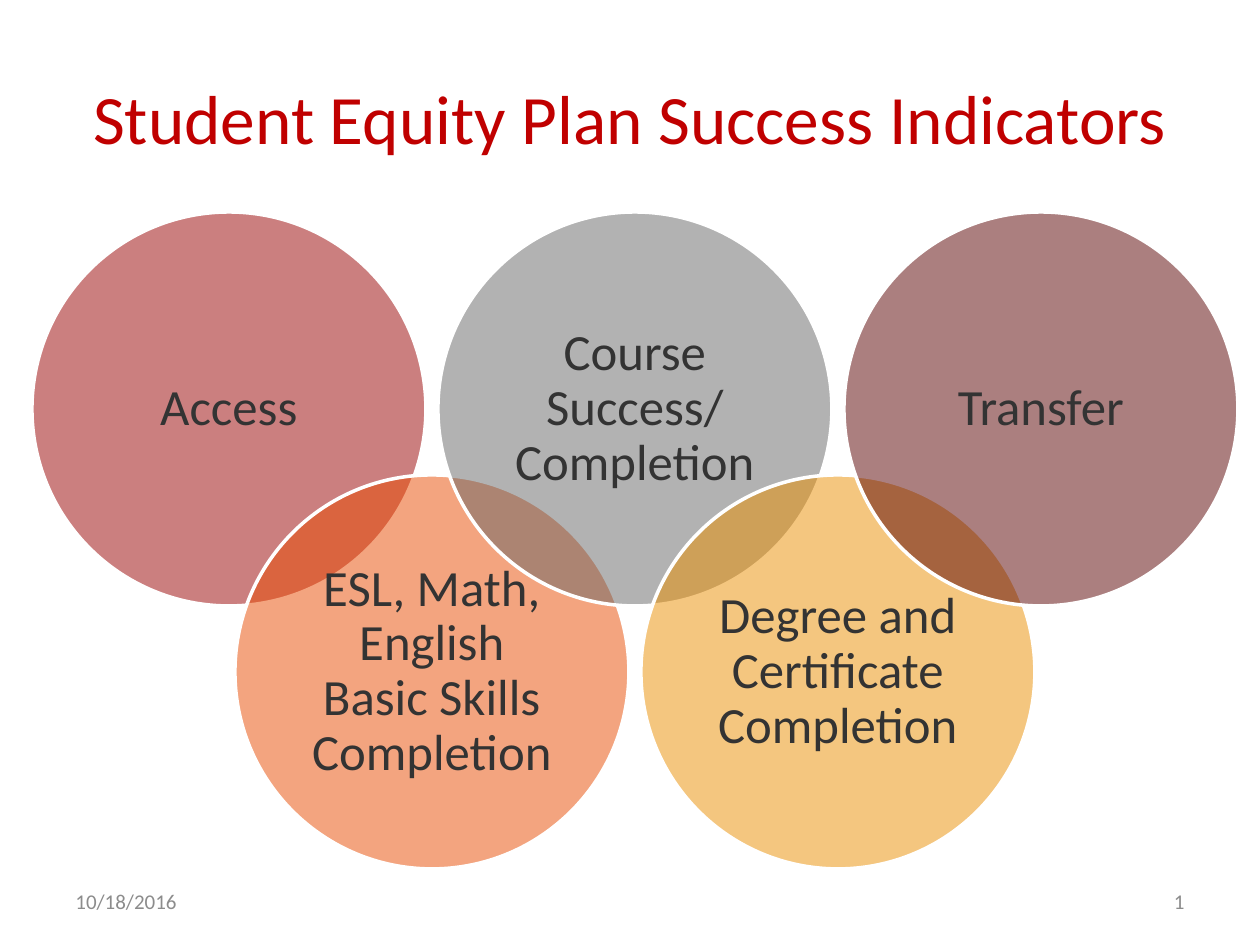
from dataclasses import dataclass

from lxml.etree import SubElement
from pptx import Presentation
from pptx.dml.color import RGBColor
from pptx.enum.shapes import MSO_SHAPE
from pptx.enum.text import MSO_ANCHOR, MSO_AUTO_SIZE, PP_ALIGN
from pptx.oxml.ns import qn
from pptx.slide import Slide
from pptx.text.text import TextFrame
from pptx.util import Emu, Pt

PX = 914400 // 126


@dataclass(frozen=True)
class Theme:
    font: str = "Calibri"
    title: str = "C00000"
    label: str = "333333"
    footer: str = "8C8C8C"
    outline: str = "FFFFFF"
    title_size: float = 39.6
    label_size: float = 29
    footer_size: float = 12
    outline_width: float = 2
    opacity: int = 50


@dataclass(frozen=True)
class Indicator:
    label: str
    color: str


THEME = Theme()

# Indicators alternate between the upper and lower row
INDICATORS = [
    Indicator("Access", "990000"),
    Indicator("ESL, Math, English Basic Skills Completion", "E94A00"),
    Indicator("Course Success/ Completion", "666666"),
    Indicator("Degree and Certificate Completion", "EB8F00"),
    Indicator("Transfer", "580101"),
]
DIAMETER = 394
FIRST_LEFT = 32
STEP = 203
ROW_TOPS = (212, 475)
LABEL_INSET = 15


def px(length: int) -> Emu:
    return Emu(length * PX)


def box(left: int, top: int, width: int, height: int) -> tuple[Emu, ...]:
    return px(left), px(top), px(width), px(height)


def write(frame: TextFrame, text: str, size: float, color: str,
          align: PP_ALIGN) -> None:
    frame.text = text
    frame.word_wrap = True
    frame.auto_size = MSO_AUTO_SIZE.NONE
    frame.vertical_anchor = MSO_ANCHOR.MIDDLE
    paragraph = frame.paragraphs[0]
    paragraph.alignment = align
    paragraph.font.name = THEME.font
    paragraph.font.size = Pt(size)
    paragraph.font.color.rgb = RGBColor.from_string(color)


def add_title(slide: Slide, text: str) -> None:
    title = slide.shapes.title
    title.left, title.top, title.width, title.height = box(63, 38, 1134, 158)
    write(title.text_frame, text, THEME.title_size, THEME.title,
          PP_ALIGN.CENTER)


def add_footer(slide: Slide, text: str, left: int, align: PP_ALIGN) -> None:
    footer = slide.shapes.add_textbox(*box(left, 876, 294, 50))
    write(footer.text_frame, text, THEME.footer_size, THEME.footer, align)


def add_circle(slide: Slide, indicator: Indicator, position: int) -> None:
    left = FIRST_LEFT + position * STEP
    top = ROW_TOPS[position % 2]
    circle = slide.shapes.add_shape(
        MSO_SHAPE.OVAL, *box(left, top, DIAMETER, DIAMETER))
    circle.shadow.inherit = False
    circle.fill.solid()
    circle.fill.fore_color.rgb = RGBColor.from_string(indicator.color)
    circle.line.color.rgb = RGBColor.from_string(THEME.outline)
    circle.line.width = Pt(THEME.outline_width)

    # Translucent fill lets the overlaps show
    fill_color = circle.element.spPr.find(
        f"{qn('a:solidFill')}/{qn('a:srgbClr')}")
    SubElement(fill_color, qn("a:alpha"), val=str(THEME.opacity * 1000))

    frame = circle.text_frame
    write(frame, indicator.label, THEME.label_size, THEME.label,
          PP_ALIGN.CENTER)
    frame.margin_left = frame.margin_right = px(LABEL_INSET)
    frame.margin_top = frame.margin_bottom = px(LABEL_INSET)
    frame.paragraphs[0].line_spacing = 0.9


def main() -> None:
    presentation = Presentation()
    presentation.slide_width, presentation.slide_height = px(1260), px(945)
    slide = presentation.slides.add_slide(presentation.slide_layouts[5])

    # Title and footer
    add_title(slide, "Student Equity Plan Success Indicators")
    add_footer(slide, "10/18/2016", 63, PP_ALIGN.LEFT)
    add_footer(slide, "1", 903, PP_ALIGN.RIGHT)

    # Interlocking circles
    for position, indicator in enumerate(INDICATORS):
        add_circle(slide, indicator, position)

    presentation.save("out.pptx")


if __name__ == "__main__":
    main()
